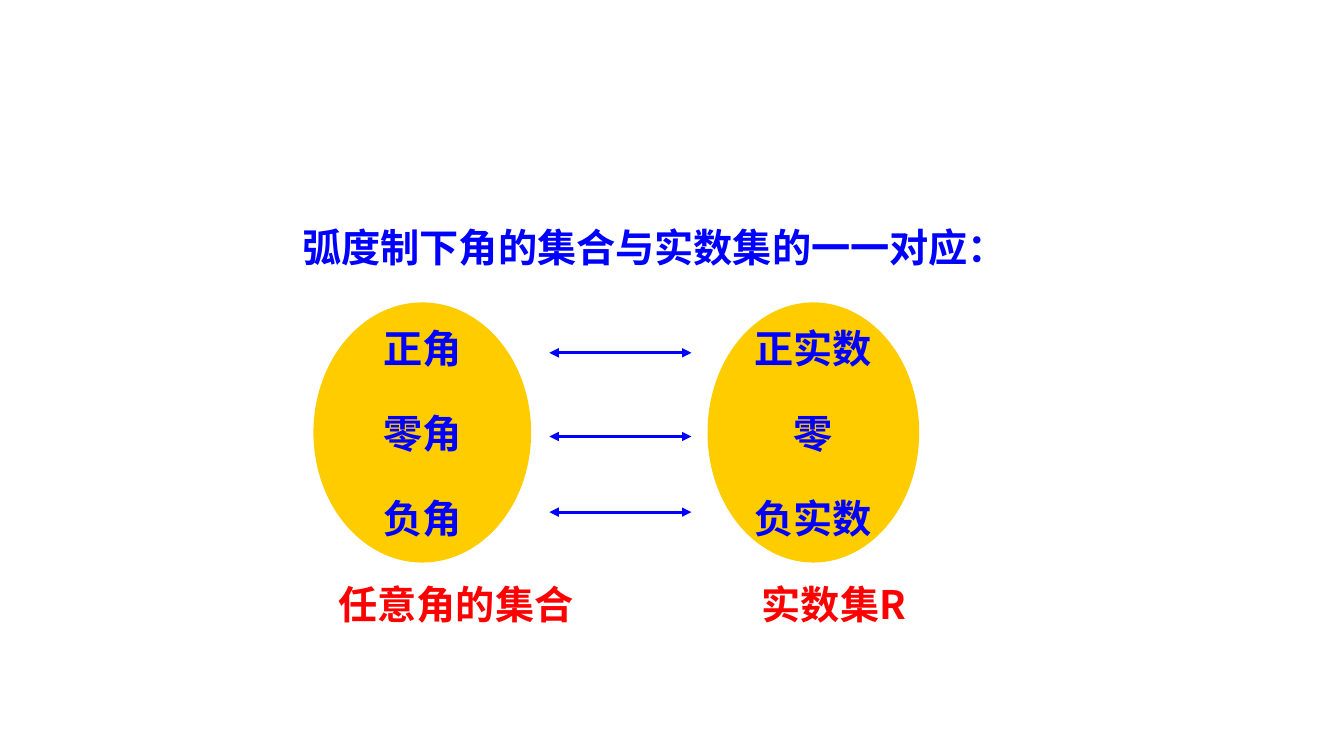
from dataclasses import dataclass

import lxml.etree
import pptx
import pptx.dml.color
import pptx.enum.shapes
import pptx.enum.text
import pptx.oxml.ns
import pptx.util

Pt = pptx.util.Pt
qn = pptx.oxml.ns.qn
ALIGN = pptx.enum.text.PP_ALIGN
ANCHOR = pptx.enum.text.MSO_ANCHOR
AUTO_SIZE = pptx.enum.text.MSO_AUTO_SIZE

BLUE = "0000FF"
RED = "FF0000"
GOLD = "FFCC00"
CHINESE_FONT = "Noto Sans CJK SC"
LATIN_FONT = "Times New Roman"
LABEL_HEIGHT = 41


@dataclass
class NumberSet:
    left: float
    width: float
    members: list[str]
    caption: str
    caption_left: float


NUMBER_SETS = [
    NumberSet(223.9, 155.5, ["正角", "零角", "负角"], "任意角的集合", 234.7),
    NumberSet(505.4, 151.2, ["正实数", "零", "负实数"], "实数集R", 537.1),
]
ARROW_TOPS = [252, 311.8, 365.8]


def color(hex_text: str) -> pptx.dml.color.RGBColor:
    return pptx.dml.color.RGBColor.from_string(hex_text)


def format_text(frame, hex_text: str, latin_font: str, alignment) -> None:
    for para in frame.paragraphs:
        para.alignment = alignment
        for span in para.runs:
            span.font.name = latin_font
            span.font.size = Pt(28)
            span.font.bold = True
            span.font.color.rgb = color(hex_text)
            properties = span.font._element
            lxml.etree.SubElement(properties, qn("a:ea"), typeface=CHINESE_FONT)


def fill_label(box, text: str, hex_text: str) -> None:
    frame = box.text_frame
    frame.text = text
    frame.word_wrap = True
    frame.auto_size = AUTO_SIZE.NONE
    frame.vertical_anchor = ANCHOR.TOP
    format_text(frame, hex_text, CHINESE_FONT, ALIGN.LEFT)


def add_title(page) -> None:
    title = page.shapes.title
    title.left, title.top = Pt(208.8), Pt(156.2)
    title.width, title.height = Pt(520.6), Pt(LABEL_HEIGHT)
    fill_label(title, "弧度制下角的集合与实数集的一一对应：", BLUE)


def add_number_set(page, number_set: NumberSet) -> None:
    oval = page.shapes.add_shape(
        pptx.enum.shapes.MSO_SHAPE.OVAL,
        Pt(number_set.left), Pt(216), Pt(number_set.width), Pt(185.8),
    )
    oval.shadow.inherit = False
    oval.fill.solid()
    oval.fill.fore_color.rgb = color(GOLD)
    oval.line.fill.background()
    frame = oval.text_frame
    frame.text = "\n".join(number_set.members)
    frame.word_wrap = False
    frame.vertical_anchor = ANCHOR.MIDDLE
    for para in frame.paragraphs[1:]:
        para.space_before = Pt(27)
    format_text(frame, BLUE, LATIN_FONT, ALIGN.CENTER)

    caption = page.shapes.add_textbox(
        Pt(number_set.caption_left), Pt(411.1), Pt(229.7), Pt(LABEL_HEIGHT)
    )
    fill_label(caption, number_set.caption, RED)


def add_double_arrow(page, top: float) -> None:
    arrow = page.shapes.add_connector(
        pptx.enum.shapes.MSO_CONNECTOR.STRAIGHT,
        Pt(392.4), Pt(top), Pt(493.9), Pt(top),
    )
    arrow.line.color.rgb = color(BLUE)
    arrow.line.width = Pt(2.25)
    outline = arrow.line._get_or_add_ln()
    for end in ("a:headEnd", "a:tailEnd"):
        lxml.etree.SubElement(outline, qn(end), type="triangle")
    lxml.etree.SubElement(arrow._element.spPr, qn("a:effectLst"))


def main() -> None:
    deck = pptx.Presentation()
    deck.slide_width, deck.slide_height = Pt(960), Pt(540)
    page = deck.slides.add_slide(deck.slide_layouts.get_by_name("Title Only"))
    add_title(page)
    for number_set in NUMBER_SETS:
        add_number_set(page, number_set)
    for top in ARROW_TOPS:
        add_double_arrow(page, top)
    deck.save("out.pptx")


if __name__ == "__main__":
    main()
